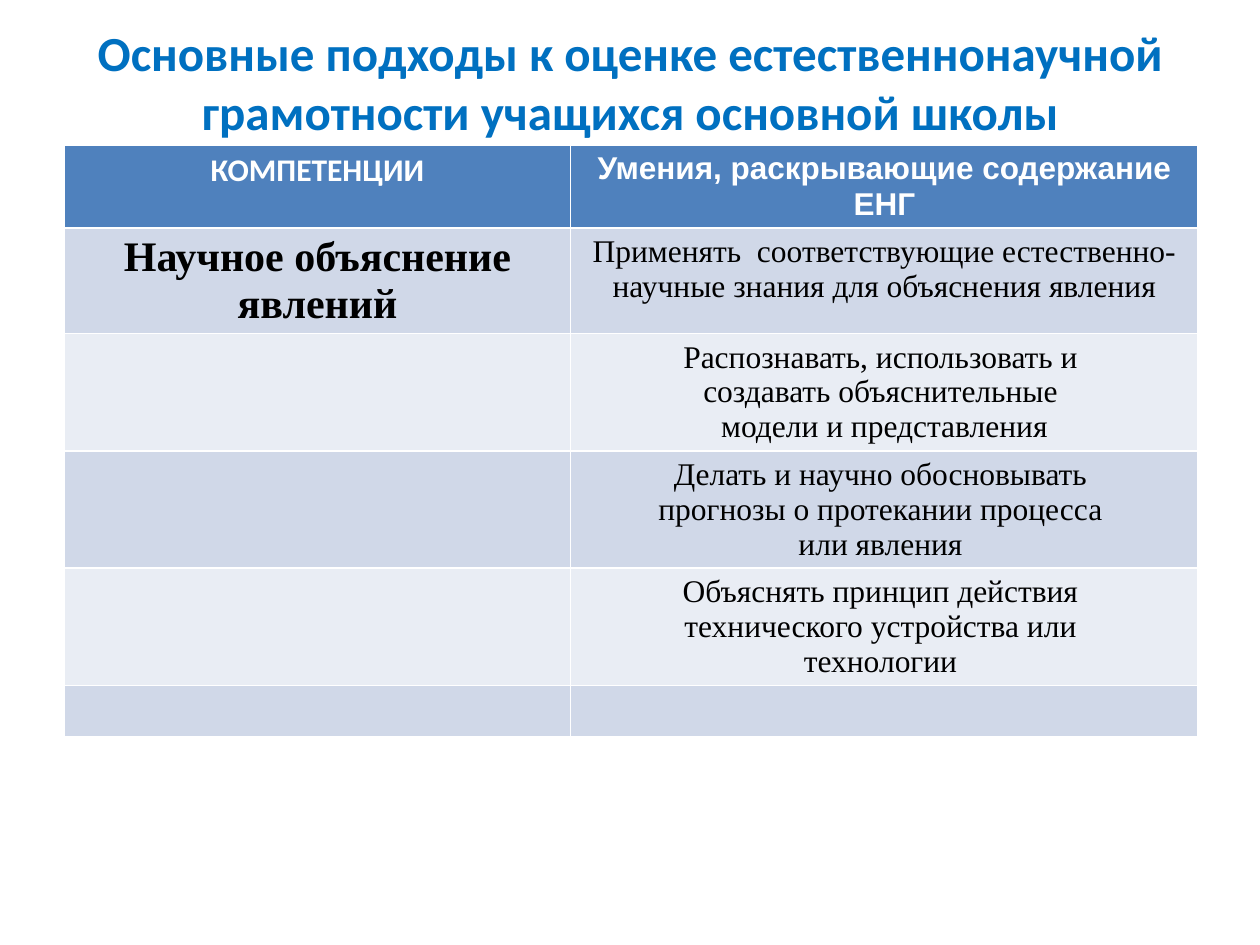
from pptx import Presentation
from pptx.dml.color import RGBColor as RGB
from pptx.enum.text import MSO_ANCHOR as Anchor, MSO_AUTO_SIZE as Fit, PP_ALIGN as Align
from pptx.util import Inches, Pt

BLUE = RGB(0x00, 0x70, 0xC0)
HEAD = RGB(0x4F, 0x81, 0xBD)
BANDS = [RGB(0xE9, 0xED, 0xF4), RGB(0xD0, 0xD8, 0xE8)]
WHITE = RGB(0xFF, 0xFF, 0xFF)
BLACK = RGB(0x00, 0x00, 0x00)

SERIF = "Times New Roman"
TITLE = {"name": "Calibri", "size": Pt(28), "bold": True, "color": BLUE}
LEFT = {"name": "Calibri", "size": Pt(18), "bold": True, "color": WHITE}
RIGHT = {**LEFT, "name": "Arial"}
SKILL = {"name": SERIF, "size": Pt(24), "bold": True, "color": BLACK}
BODY = {"name": SERIF, "size": Pt(18), "bold": False, "color": BLACK}

COLS = [4.02, 4.98]
ROW = 0.41
# Each cell holds its text and format; \v is a line break
ROWS = [
    [("КОМПЕТЕНЦИИ", LEFT), ("Умения, раскрывающие содержание ЕНГ", RIGHT)],
    [("Научное объяснение явлений", SKILL),
     ("Применять  соответствующие естественно-научные знания "
      "для объяснения явления", BODY)],
    [("", BODY), ("Распознавать, использовать и \vсоздавать объяснительные "
                  "\vмодели и представления", BODY)],
    [("", BODY), ("Делать и научно обосновывать \vпрогнозы о протекании процесса "
                  "\vили явления ", BODY)],
    [("", BODY), ("Объяснять принцип действия \vтехнического устройства или "
                  "\vтехнологии ", BODY)],
    [("", BODY), ("", BODY)],
]


def write(frame, text, form):
    """Fill a text frame with one centred, formatted paragraph."""
    par = frame.paragraphs[0]
    par.text = text
    par.alignment = Align.CENTER
    for run in par.runs:
        for key, val in form.items():
            if key == "color":
                run.font.color.rgb = val
            else:
                setattr(run.font, key, val)


def add_title(slide, text):
    title = slide.shapes.title
    place = {"left": 0.5, "top": 0.3, "width": 9, "height": 0.69}
    for key, val in place.items():
        setattr(title, key, Inches(val))
    frame = title.text_frame
    modes = {"word_wrap": True, "auto_size": Fit.NONE, "vertical_anchor": Anchor.MIDDLE}
    for key, val in modes.items():
        setattr(frame, key, val)
    write(frame, text, TITLE)


def add_grid(slide, rows):
    grid = slide.shapes.add_table(len(rows), len(COLS), Inches(0.51), Inches(1.15),
                                  Inches(sum(COLS)), Inches(5.01)).table
    for col, width in zip(grid.columns, COLS):
        col.width = Inches(width)
    for i, row in enumerate(rows):
        grid.rows[i].height = Inches(ROW)  # rows grow to fit their text
        for j, (text, form) in enumerate(row):
            cell = grid.cell(i, j)
            cell.fill.solid()
            cell.fill.fore_color.rgb = BANDS[i % 2] if i else HEAD
            if text:
                write(cell.text_frame, text, form)


def main():
    deck = Presentation()
    deck.slide_width, deck.slide_height = Inches(10), Inches(7.5)
    slide = deck.slides.add_slide(deck.slide_layouts[5])
    # Heading
    add_title(slide, "Основные подходы к оценке естественнонаучной "
                     "грамотности учащихся основной школы")
    # Competences and skills
    add_grid(slide, ROWS)
    deck.save("out.pptx")


if __name__ == "__main__":
    main()
